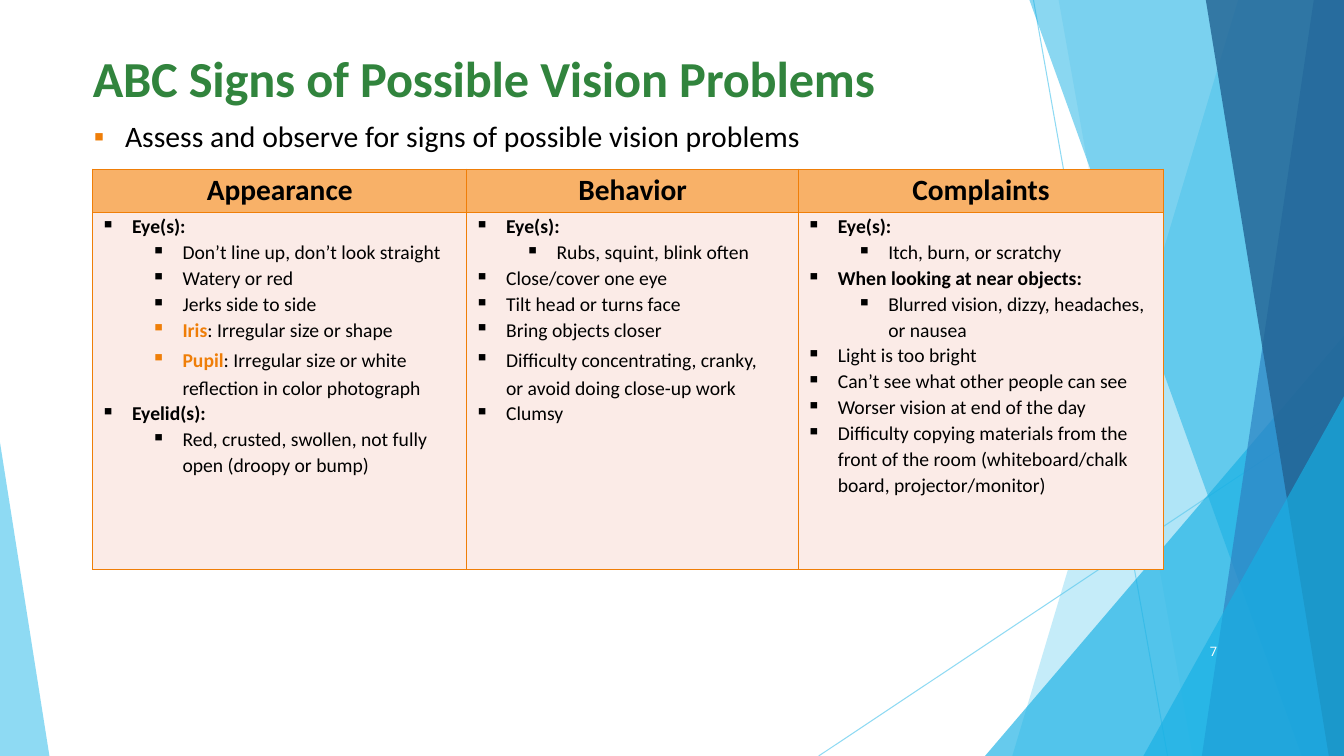
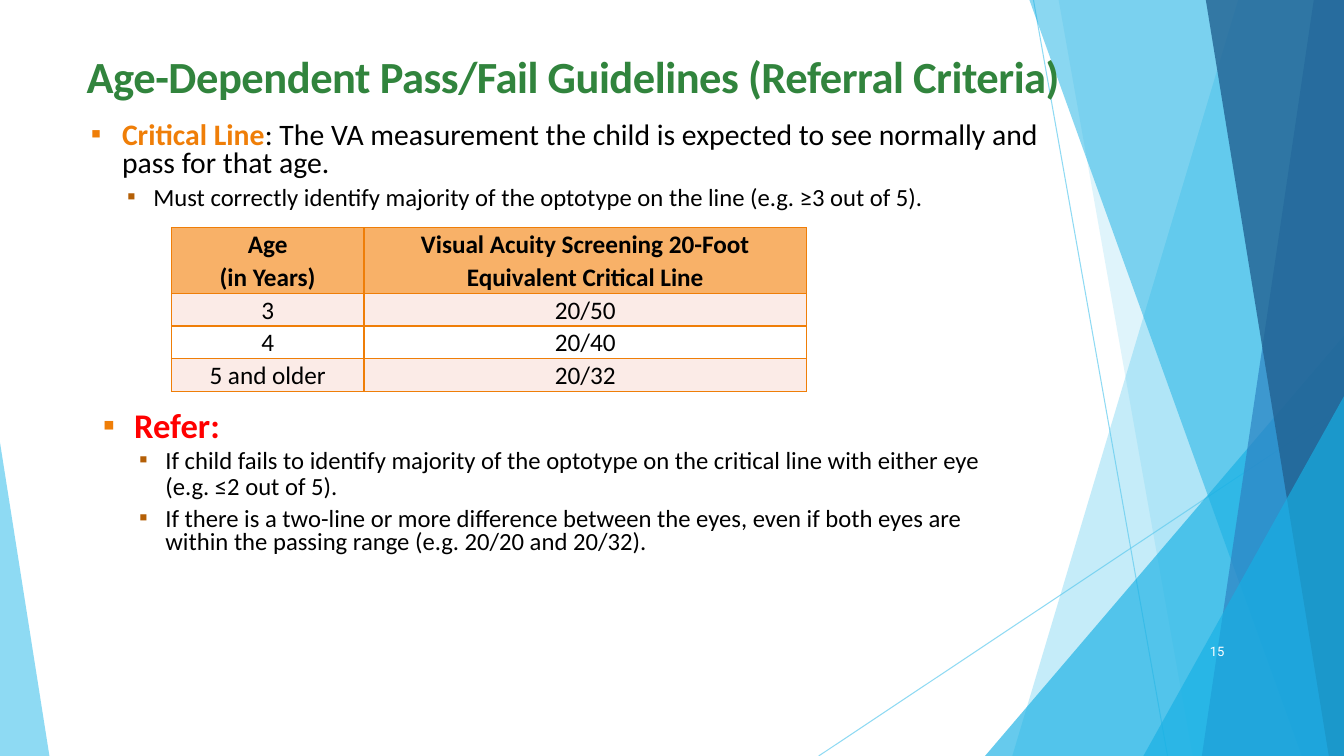
from dataclasses import dataclass
from typing import Any

import pptx
import pptx.dml.color
import pptx.enum.shapes
import pptx.enum.text
import pptx.oxml
import pptx.oxml.ns
import pptx.util
from lxml import etree

Inches = pptx.util.Inches
Pt = pptx.util.Pt
qn = pptx.oxml.ns.qn
Align = pptx.enum.text.PP_ALIGN
Anchor = pptx.enum.text.MSO_ANCHOR
Kind = pptx.enum.shapes.MSO_SHAPE
WIDE, HIGH = 13.33, 7.5


@dataclass(frozen=True)
class Theme:
    font: str = "Calibri"
    small: str = "Roboto"
    ink: str = "000000"
    green: str = "31843D"
    orange: str = "EF7E08"
    brown: str = "B45F06"
    red: str = "FF0000"
    white: str = "FFFFFF"
    head: str = "F8B168"
    blush: str = "FBEBE7"
    sky: str = "5FCBEF"
    aqua: str = "17B0E4"
    blue: str = "2E83C3"
    navy: str = "226292"
    list_size: float = 21.2
    sub_size: float = 17.6
    cell_size: float = 14
    page_size: float = 9.3


THEME = Theme()


@dataclass
class Style:
    """Looks of one paragraph; hang is the left margin and first indent."""
    size: float
    color: str = THEME.ink
    font: str = THEME.font
    bold: bool = False
    align: Any = Align.LEFT
    step: Any = 1.0
    gap: float = 0
    hang: tuple = ()
    dot: str = ""
    level: int = 0
    track: int = 0


@dataclass
class Line:
    """A paragraph, with an optional lead set in bold orange."""
    text: str
    style: Style
    lead: str = ""


def rgb(code):
    return pptx.dml.color.RGBColor.from_string(code)


def inset(box, top=0):
    """Clear the margins of a text frame or cell, but for the top."""
    box.margin_left = box.margin_right = box.margin_bottom = 0
    box.margin_top = Inches(top)


def bullet(para, style):
    props = para._p.get_or_add_pPr()
    props.set("marL", str(Inches(style.hang[0])))
    props.set("indent", str(Inches(style.hang[1])))
    if style.dot:
        tint = etree.SubElement(props, qn("a:buClr"))
        etree.SubElement(tint, qn("a:srgbClr")).set("val", style.dot)
    etree.SubElement(props, qn("a:buChar")).set("char", "▪")


def write(frame, lines):
    for index, line in enumerate(lines):
        para = frame.add_paragraph() if index else frame.paragraphs[0]
        style = line.style
        para.level = style.level
        para.alignment = style.align
        para.line_spacing = style.step
        para.space_before = Pt(style.gap)
        if style.hang:
            bullet(para, style)
        font = para.font
        font.name, font.size, font.bold = style.font, Pt(style.size), style.bold
        font.color.rgb = rgb(style.color)
        if style.track:
            para._p.pPr.find(qn("a:defRPr")).set("spc", str(style.track))
        if line.lead:
            run = para.add_run()
            run.text = line.lead
            run.font.bold = True
            run.font.color.rgb = rgb(THEME.orange)
        for part, text in enumerate(line.text.split("\n")):
            if part:
                para.add_line_break()
            para.add_run().text = text


def fill_box(box, spot, lines, top=0):
    """Place a placeholder or text box and write its lines."""
    box.left, box.top, box.width, box.height = map(Inches, spot)
    frame = box.text_frame
    frame.word_wrap = True
    frame.auto_size = pptx.enum.text.MSO_AUTO_SIZE.NONE
    frame.vertical_anchor = Anchor.TOP
    inset(frame, top)
    write(frame, lines)


def fade(item, part):
    for tint in item.element.spPr.iter(qn("a:srgbClr")):
        etree.SubElement(tint, qn("a:alpha")).set("val", str(part * 1000))


def paint(shape, color, part):
    shape.shadow.inherit = False
    shape.fill.solid()
    shape.fill.fore_color.rgb = rgb(color)
    shape.line.fill.background()
    fade(shape, part)


def band(shapes, top, foot, color, part, right=WIDE):
    """Draw a full-height band whose left edge slants from top to foot."""
    pen = shapes.build_freeform(Inches(top), 0)
    ends = [(right, 0), (right, HIGH), (foot, HIGH)]
    pen.add_line_segments([(Inches(x), Inches(y)) for x, y in ends], close=True)
    paint(pen.convert_to_shape(), color, part)


def wedge(shapes, left, top, width, peak, color, part):
    """Draw a triangle that stands on the foot of the slide."""
    spot = map(Inches, (left, top, width, HIGH - top))
    shape = shapes.add_shape(Kind.ISOSCELES_TRIANGLE, *spot)
    shape.adjustments[0] = peak
    paint(shape, color, part)


def streak(shapes, start, end):
    line = shapes.add_connector(
        pptx.enum.shapes.MSO_CONNECTOR.STRAIGHT, *map(Inches, start + end))
    line.line.color.rgb = rgb(THEME.sky)
    line.line.width = Pt(0.75)
    etree.SubElement(line.element.spPr, qn("a:effectLst"))
    fade(line, 70)


def backdrop(slide, master):
    """Draw the shared art, then move it to the master."""
    shapes = slide.shapes
    streak(shapes, (10.25, 0), (11.58, HIGH))
    streak(shapes, (WIDE, 4.03), (8.12, HIGH))
    band(shapes, 12.28, 10.04, THEME.sky, 36)
    band(shapes, 10.5, 11.83, THEME.sky, 20)
    wedge(shapes, 9.77, 3.33, 3.56, 1, THEME.aqua, 66)
    band(shapes, 10.21, 12.91, THEME.aqua, 50)
    band(shapes, 13.03, 11.92, THEME.blue, 70)
    band(shapes, 11.96, 13.18, THEME.navy, 80)
    wedge(shapes, 11.34, 3.93, 1.99, 1, THEME.aqua, 66)
    wedge(shapes, 0, 4.39, 0.49, 0, THEME.sky, 70)
    art = [item for item in shapes if not item.is_placeholder]
    for number, item in enumerate(art, 100):
        for mark in item.element.iter(qn("p:cNvPr")):
            mark.set("id", str(number))
        master.shapes.element.append(item.element)


def page(slide, number):
    box = slide.shapes.add_textbox(0, 0, 0, 0)
    style = Style(THEME.page_size, THEME.white, THEME.small, gap=1.7)
    fill_box(box, (12, 6.31, 0.25, 0.31), [Line(number, style)])
    box.text_frame.vertical_anchor = Anchor.MIDDLE


def title(slide, text, spot, size, top, track=0):
    style = Style(size, THEME.green, bold=True, gap=0.9, track=track)
    fill_box(slide.shapes.title, spot, [Line(text, style)], top)


def border(cell):
    props = cell._tc.get_or_add_tcPr()
    for index, side in enumerate(("lnL", "lnR", "lnT", "lnB")):
        edge = etree.Element(qn("a:" + side), w=str(Pt(1)))
        solid = etree.SubElement(edge, qn("a:solidFill"))
        etree.SubElement(solid, qn("a:srgbClr")).set("val", THEME.orange)
        props.insert(index, edge)


def grid(slide, left, top, widths, heights, rows):
    """Add a table; each cell is a list of lines, and odd rows are tinted."""
    size = map(Inches, (left, top, sum(widths), sum(heights)))
    table = slide.shapes.add_table(len(rows), len(widths), *size).table
    table.first_row = table.horz_banding = False
    for column, width in zip(table.columns, widths):
        column.width = Inches(width)
    for index, (row, height) in enumerate(zip(rows, heights)):
        table.rows[index].height = Inches(height)
        for cell, lines in zip(table.rows[index].cells, row):
            inset(cell)
            write(cell.text_frame, lines)
            cell.fill.solid()
            plain = THEME.blush if index % 2 else THEME.white
            cell.fill.fore_color.rgb = rgb(plain if index else THEME.head)
            border(cell)


def item(text, deep=0, lead="", bold=False, step=18.5, gap=0):
    """A bulleted line inside a table cell."""
    style = Style(THEME.cell_size, bold=bold, step=Pt(step), gap=gap,
                  hang=(0.89 if deep else 0.39, -0.31), level=deep)
    return Line(text, style, lead)


def point(text, lead="", **looks):
    """A first-level line of a body list."""
    looks = {"size": THEME.list_size, **looks}
    return Line(text, Style(hang=(0.32, -0.31), dot=THEME.orange, **looks), lead)


def sub(text, **looks):
    """A second-level line of a body list."""
    return Line(text, Style(THEME.sub_size, hang=(0.63, -0.26),
                            dot=THEME.brown, level=1, **looks))


def signs(slide):
    title(slide, "ABC Signs of Possible Vision Problems",
          (0.92, 0.27, 9.76, 0.8), 36, 0.2, -15)
    fill_box(slide.placeholders[1], (0.92, 1.16, 7.66, 0.37),
             [point("Assess and observe for signs of possible vision problems",
                    gap=0.9)], 0.01)
    head = Style(21, bold=True, align=Align.CENTER, step=Pt(27.9))
    heads = [[Line(text, head)] for text in ("Appearance", "Behavior", "Complaints")]
    looks = [
        item("Eye(s):", bold=True),
        item("Don’t line up, don’t look straight", 1),
        item("Watery or red", 1),
        item("Jerks side to side", 1),
        item(": Irregular size or shape", 1, "Iris"),
        item(": Irregular size or white\nreflection in color photograph", 1,
             "Pupil", step=20.6, gap=0.8),
        item("Eyelid(s):", bold=True, step=17.6),
        item("Red, crusted, swollen, not fully\nopen (droopy or bump)", 1),
    ]
    acts = [
        item("Eye(s):", bold=True),
        item("Rubs, squint, blink often", 1),
        item("Close/cover one eye"),
        item("Tilt head or turns face"),
        item("Bring objects closer"),
        item("Difficulty concentrating, cranky,\nor avoid doing close-up work",
             step=20.6, gap=0.8),
        item("Clumsy", step=17.6),
    ]
    woes = [
        item("Eye(s):", bold=True),
        item("Itch, burn, or scratchy", 1),
        item("When looking at near objects:", bold=True),
        item("Blurred vision, dizzy, headaches,\nor nausea", 1),
        item("Light is too bright"),
        item("Can’t see what other people can see"),
        item("Worser vision at end of the day"),
        item("Difficulty copying materials from the\nfront of the room "
             "(whiteboard/chalk\nboard, projector/monitor)"),
    ]
    grid(slide, 0.92, 1.68, (3.71, 3.29, 3.62), (0.43, 3.54),
         [heads, [looks, acts, woes]])
    page(slide, "7")


def guide(slide):
    title(slide, "Age-Dependent Pass/Fail Guidelines (Referral Criteria)",
          (0.86, 0.21, 11.86, 0.82), 31.8, 0.28, -35)
    fill_box(slide.placeholders[1], (0.89, 1.14, 9.67, 0.95), [
        point(": The VA measurement the child is expected to see normally and\n"
              "pass for that age.", "Critical Line", step=Pt(20.3), gap=5.8),
        sub("Must correctly identify majority of the optotype on the line "
            "(e.g. ≥3 out of 5).", gap=1.3),
    ], 0.08)
    fill_box(slide.placeholders[2], (1.01, 3.98, 9.39, 1.54), [
        point("Refer:", size=24.7, color=THEME.red, bold=True, gap=2.5),
        sub("If child fails to identify majority of the optotype on the critical "
            "line with either eye\n(e.g. ≤2 out of 5).", step=Pt(19.1), gap=1.2),
        sub("If there is a two-line or more difference between the eyes, even if "
            "both eyes are\nwithin the passing range (e.g. 20/20 and 20/32).",
            step=0.8, gap=5.3),
    ], 0.03)
    rows = [
        ("Age\n(in Years)",
         "Visual Acuity Screening 20-Foot\nEquivalent Critical Line"),
        ("3", "20/50"), ("4", "20/40"), ("5 and older", "20/32"),
    ]
    cells = [[[Line(text, Style(18, bold=not index, align=Align.CENTER,
                                step=Pt(23.3)))] for text in row]
             for index, row in enumerate(rows)]
    grid(slide, 1.7, 2.26, (1.91, 4.39), (0.65, 0.32, 0.32, 0.32), cells)
    page(slide, "15")


def main():
    deck = pptx.Presentation()
    deck.slide_width, deck.slide_height = Inches(WIDE), Inches(HIGH)
    first = deck.slides.add_slide(deck.slide_layouts[1])
    backdrop(first, deck.slide_master)
    signs(first)
    guide(deck.slides.add_slide(deck.slide_layouts[3]))
    deck.save("out.pptx")


if __name__ == "__main__":
    main()
